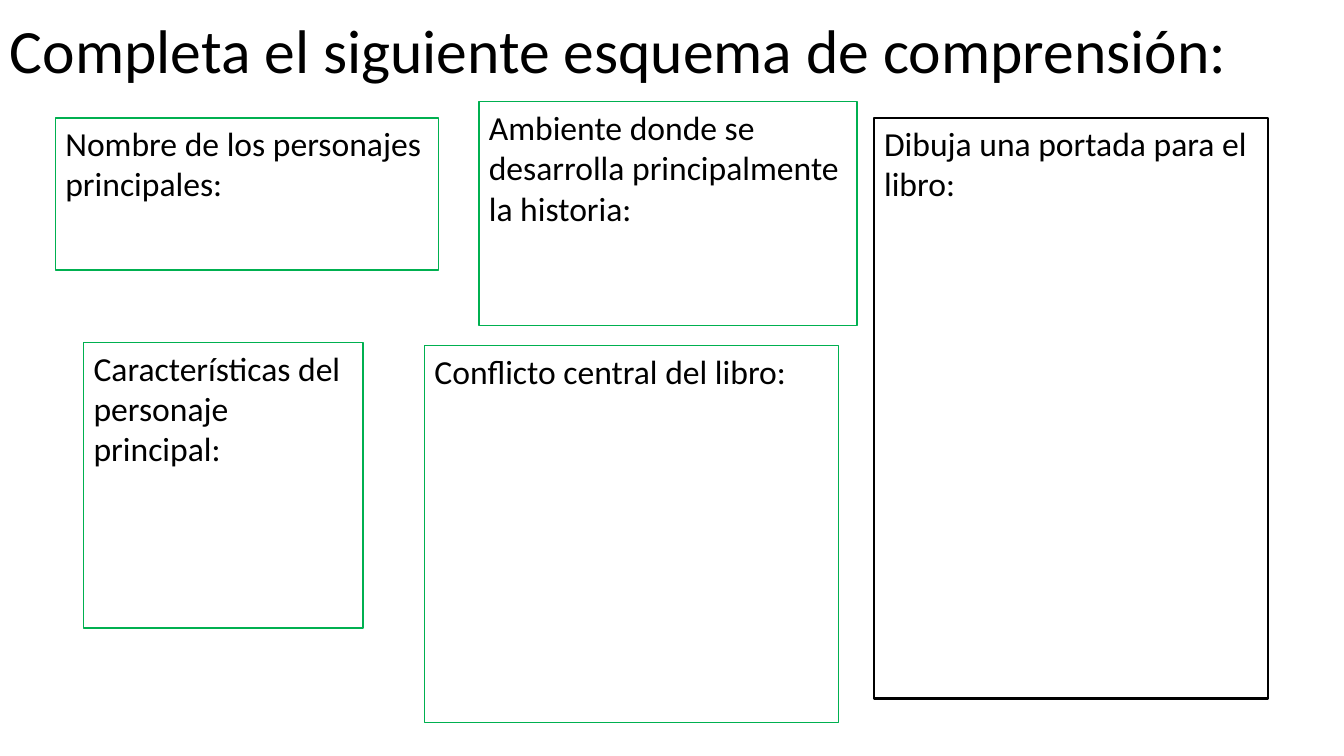
from dataclasses import dataclass

from pptx import Presentation
from pptx.dml.color import RGBColor
from pptx.enum.shapes import MSO_SHAPE
from pptx.enum.text import MSO_ANCHOR, PP_ALIGN
from pptx.util import Inches, Pt

RECTANGLE = MSO_SHAPE.RECTANGLE
TOP, MIDDLE = MSO_ANCHOR.TOP, MSO_ANCHOR.MIDDLE
LEFT = PP_ALIGN.LEFT


@dataclass(frozen=True)
class Theme:
    font: str = "Calibri"
    title_size: int = 44
    prompt_size: int = 24
    text: RGBColor = RGBColor(0, 0, 0)
    green: RGBColor = RGBColor(0x00, 0xB0, 0x50)
    black: RGBColor = RGBColor(0, 0, 0)


THEME = Theme()


@dataclass(frozen=True)
class AnswerBox:
    prompt: str
    left: float
    top: float
    width: float
    height: float
    line_color: RGBColor = THEME.green
    line_width: float = 1


ANSWER_BOXES = [
    AnswerBox("Nombre de los personajes principales:", 0.55, 1.17, 3.8, 1.51),
    AnswerBox("Ambiente donde se desarrolla principalmente la historia:",
              4.75, 1.01, 3.75, 2.22),
    AnswerBox("Características del personaje principal:", 0.83, 3.4, 2.77, 2.83),
    AnswerBox("Conflicto central del libro:", 4.21, 3.43, 4.11, 3.74),
    AnswerBox("Dibuja una portada para el libro:", 8.67, 1.17, 3.91, 5.76,
              line_color=THEME.black, line_width=1.5),
]


def write_text(shape, text: str, *, size: int, anchor=TOP, line_spacing: float = 1.0) -> None:
    frame = shape.text_frame
    frame.word_wrap = True
    frame.vertical_anchor = anchor
    paragraph = frame.paragraphs[0]
    paragraph.alignment = LEFT
    paragraph.line_spacing = line_spacing
    run = paragraph.add_run()
    run.text = text
    run.font.name = THEME.font
    run.font.size = Pt(size)
    run.font.color.rgb = THEME.text


def add_title(slide, text: str) -> None:
    title = slide.shapes.add_textbox(Inches(0), Inches(0.02), Inches(13.22), Inches(1.02))
    write_text(title, text, size=THEME.title_size, anchor=MIDDLE, line_spacing=0.9)


def add_answer_box(slide, box: AnswerBox) -> None:
    shape = slide.shapes.add_shape(RECTANGLE, Inches(box.left), Inches(box.top),
                                   Inches(box.width), Inches(box.height))
    shape.shadow.inherit = False
    shape.fill.background()
    shape.line.color.rgb = box.line_color
    shape.line.width = Pt(box.line_width)
    write_text(shape, box.prompt, size=THEME.prompt_size)


def main() -> None:
    presentation = Presentation()
    presentation.slide_width = Inches(13.33)
    presentation.slide_height = Inches(7.5)
    slide = presentation.slides.add_slide(presentation.slide_layouts[6])
    add_title(slide, "Completa el siguiente esquema de comprensión:")
    for box in ANSWER_BOXES:
        add_answer_box(slide, box)
    presentation.save("out.pptx")


if __name__ == "__main__":
    main()
